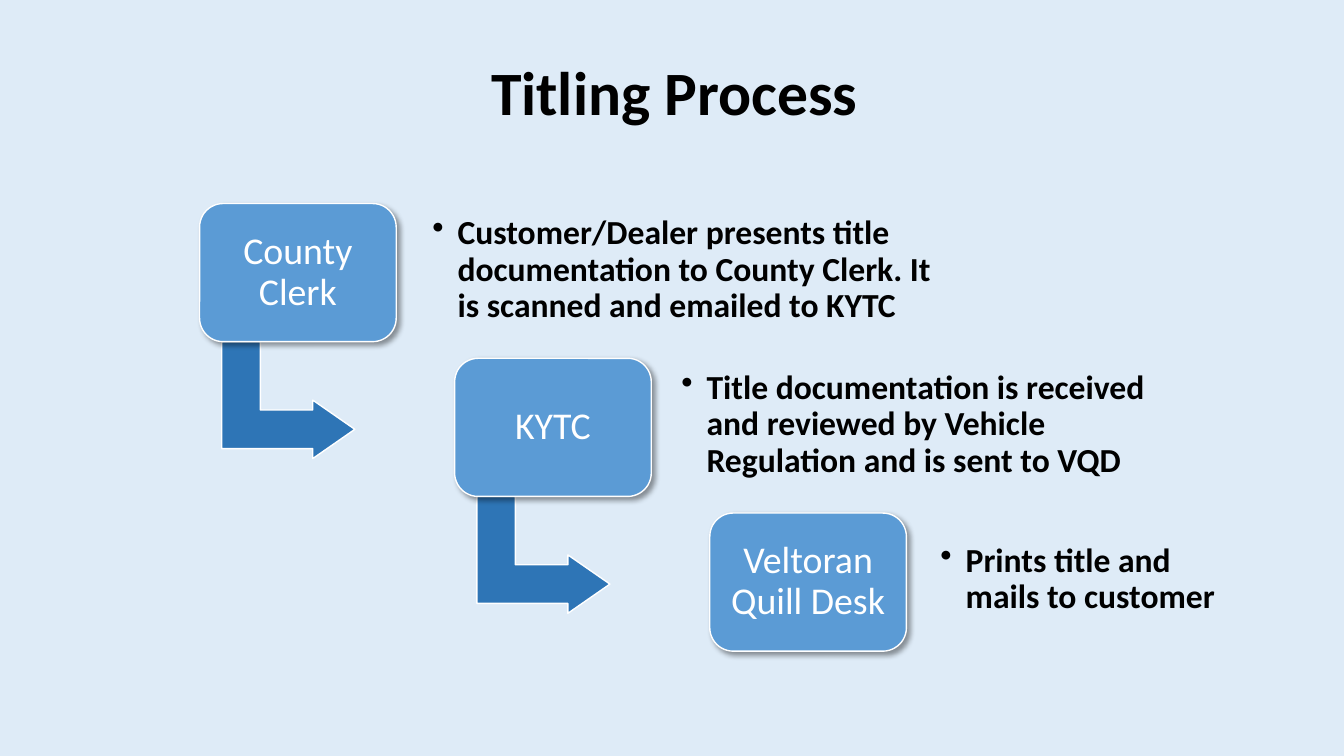
from dataclasses import dataclass

import pptx
import pptx.dml.color
import pptx.enum.shapes
import pptx.enum.text
import pptx.oxml
import pptx.oxml.ns
import pptx.util
from pptx.enum.shapes import MSO_SHAPE

SLIDE_W = pptx.util.Inches(13.33)
SLIDE_H = pptx.util.Inches(7.5)


@dataclass(frozen=True)
class Theme:
    font: str = "Calibri"
    background: str = "DEEBF7"
    box: str = "5B9BD5"
    arrow: str = "2E75B6"
    outline: str = "FFFFFF"
    light: str = "FFFFFF"
    dark: str = "000000"
    title_size: int = 44
    label_size: int = 27
    detail_size: int = 24


@dataclass(frozen=True)
class Area:
    """A rectangle in percent of the slide's width and height."""
    left: float
    top: float
    width: float
    height: float

    def emu(self) -> tuple[int, int, int, int]:
        return (int(SLIDE_W * self.left / 100), int(SLIDE_H * self.top / 100),
                int(SLIDE_W * self.width / 100), int(SLIDE_H * self.height / 100))


@dataclass(frozen=True)
class Step:
    label: str
    detail: str
    detail_left: float
    detail_width: float


THEME = Theme()
TITLE = Area(7.05, 2.93, 86.27, 19.33)
FIRST_BOX = Area(14.85, 26.93, 14.63, 18.27)
STEP_X, STEP_Y = 18.98, 20.47
ARROW = Area(2.25, 17.2, 8.7, 17.6)  # left and top count from the box
DETAIL_DROP, DETAIL_HEIGHT = 1.47, 14.67

STEPS = [
    Step("County Clerk", "Customer/Dealer presents title documentation to County Clerk. "
         "It is scanned and emailed to KYTC", 31.43, 39.23),
    Step("KYTC", "Title documentation is received and reviewed by Vehicle "
         "Regulation and is sent to VQD", 49.96, 36.83),
    Step("Veltoran Quill Desk", "Prints title and mails to customer", 69.24, 22.2),
]


def rgb(value: str) -> pptx.dml.color.RGBColor:
    return pptx.dml.color.RGBColor.from_string(value)


def write(s, text: str, size: int, color: str, bold: bool, centred: bool, margin: float):
    """Fill a shape with one paragraph and return that paragraph."""
    tf = s.text_frame
    tf.word_wrap = True
    tf.vertical_anchor = pptx.enum.text.MSO_ANCHOR.MIDDLE
    tf.margin_left = tf.margin_right = pptx.util.Inches(margin)
    tf.margin_top = tf.margin_bottom = pptx.util.Inches(margin)
    p = tf.paragraphs[0]
    align = pptx.enum.text.PP_ALIGN
    p.alignment = align.CENTER if centred else align.LEFT
    p.line_spacing = 0.9
    r = p.add_run()
    r.text = text
    r.font.name = THEME.font
    r.font.size = pptx.util.Pt(size)
    r.font.bold = bold
    r.font.color.rgb = rgb(color)
    return p


def add_bullet(p) -> None:
    pPr = p._p.get_or_add_pPr()
    indent = pptx.util.Inches(0.25)
    pPr.set("marL", str(indent))
    pPr.set("indent", str(-indent))
    pPr.append(pptx.oxml.parse_xml(
        f'<a:buChar {pptx.oxml.ns.nsdecls("a")} char="•"/>'))


def add_block(shapes, kind: MSO_SHAPE, area: Area, fill: str, adjustments: list[float]):
    s = shapes.add_shape(kind, *area.emu())
    s.shadow.inherit = False
    s.fill.solid()
    s.fill.fore_color.rgb = rgb(fill)
    s.line.color.rgb = rgb(THEME.outline)
    s.line.width = pptx.util.Pt(1)
    for i, value in enumerate(adjustments):
        s.adjustments[i] = value
    return s


def add_soft_shadow(s) -> None:
    effects = s._element.spPr.find(pptx.oxml.ns.qn("a:effectLst"))
    effects.append(pptx.oxml.parse_xml(
        f'<a:outerShdw {pptx.oxml.ns.nsdecls("a")} blurRad="{pptx.util.Pt(4)}" '
        f'dist="{pptx.util.Pt(3)}" dir="2700000" rotWithShape="0">'
        f'<a:srgbClr val="{THEME.dark}"><a:alpha val="40000"/></a:srgbClr></a:outerShdw>'))


def add_step(shapes, step: Step, index: int, is_last: bool) -> None:
    left = FIRST_BOX.left + index * STEP_X
    top = FIRST_BOX.top + index * STEP_Y
    if not is_last:
        area = Area(left + ARROW.left, top + ARROW.top, ARROW.width, ARROW.height)
        arrow = add_block(shapes, MSO_SHAPE.BENT_UP_ARROW, area, THEME.arrow,
                          [0.33, 0.25, 0.36])
        arrow.rotation = 90
    box = add_block(shapes, MSO_SHAPE.ROUNDED_RECTANGLE,
                    Area(left, top, FIRST_BOX.width, FIRST_BOX.height), THEME.box, [0.17])
    add_soft_shadow(box)
    write(box, step.label, THEME.label_size, THEME.light, False, True, 0.11)
    detail = shapes.add_textbox(*Area(step.detail_left, top + DETAIL_DROP,
                                      step.detail_width, DETAIL_HEIGHT).emu())
    add_bullet(write(detail, step.detail, THEME.detail_size, THEME.dark, True, False, 0.1))


def main() -> None:
    prs = pptx.Presentation()
    prs.slide_width, prs.slide_height = SLIDE_W, SLIDE_H
    slide = prs.slides.add_slide(prs.slide_layouts[6])
    slide.background.fill.solid()
    slide.background.fill.fore_color.rgb = rgb(THEME.background)
    title = slide.shapes.add_textbox(*TITLE.emu())
    write(title, "Titling Process", THEME.title_size, THEME.dark, True, True, 0.1)
    for index, step in enumerate(STEPS):
        add_step(slide.shapes, step, index, index == len(STEPS) - 1)
    prs.save("out.pptx")


if __name__ == "__main__":
    main()
